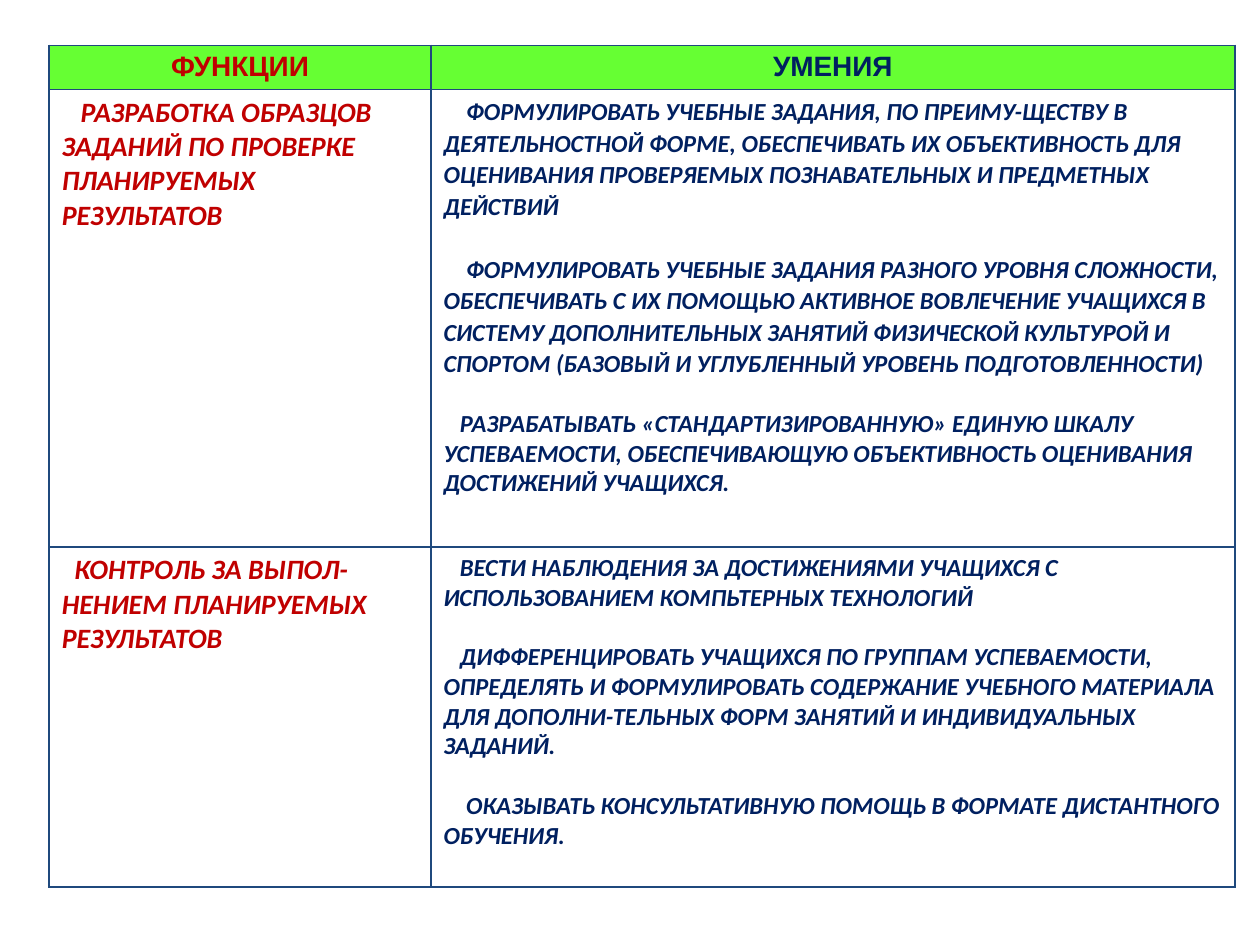
from lxml.etree import fromstring
from pptx import Presentation
from pptx.dml.color import RGBColor
from pptx.enum.text import PP_ALIGN
from pptx.util import Inches, Pt

RED = RGBColor(0xC0, 0x00, 0x00)
NAVY = RGBColor(0x00, 0x20, 0x60)
GREEN = RGBColor(0x66, 0xFF, 0x33)
EDGE = RGBColor(0x1F, 0x49, 0x7D)
INKS = (RED, NAVY)

HEADS = ("ФУНКЦИИ", "УМЕНИЯ")
# Each paragraph: text, first-line indent in inches, line pitch in points
ROWS = [
    (
        [("РАЗРАБОТКА ОБРАЗЦОВ ЗАДАНИЙ ПО ПРОВЕРКЕ ПЛАНИРУЕМЫХ РЕЗУЛЬТАТОВ", 0.15, None)],
        [
            ("ФОРМУЛИРОВАТЬ УЧЕБНЫЕ ЗАДАНИЯ, ПО ПРЕИМУ-ЩЕСТВУ В ДЕЯТЕЛЬНОСТНОЙ ФОРМЕ, "
             "ОБЕСПЕЧИВАТЬ ИХ ОБЪЕКТИВНОСТЬ ДЛЯ ОЦЕНИВАНИЯ ПРОВЕРЯЕМЫХ ПОЗНАВАТЕЛЬНЫХ "
             "И ПРЕДМЕТНЫХ ДЕЙСТВИЙ", 0.18, 18),
            ("ФОРМУЛИРОВАТЬ УЧЕБНЫЕ ЗАДАНИЯ РАЗНОГО УРОВНЯ СЛОЖНОСТИ, ОБЕСПЕЧИВАТЬ "
             "С ИХ ПОМОЩЬЮ АКТИВНОЕ ВОВЛЕЧЕНИЕ УЧАЩИХСЯ В СИСТЕМУ ДОПОЛНИТЕЛЬНЫХ "
             "ЗАНЯТИЙ ФИЗИЧЕСКОЙ КУЛЬТУРОЙ И СПОРТОМ (БАЗОВЫЙ И УГЛУБЛЕННЫЙ УРОВЕНЬ "
             "ПОДГОТОВЛЕННОСТИ)", 0.18, 18),
            ("РАЗРАБАТЫВАТЬ «СТАНДАРТИЗИРОВАННУЮ» ЕДИНУЮ ШКАЛУ УСПЕВАЕМОСТИ, "
             "ОБЕСПЕЧИВАЮЩУЮ ОБЪЕКТИВНОСТЬ ОЦЕНИВАНИЯ ДОСТИЖЕНИЙ УЧАЩИХСЯ.", 0.13, 17),
        ],
    ),
    (
        [("КОНТРОЛЬ ЗА ВЫПОЛ-НЕНИЕМ ПЛАНИРУЕМЫХ РЕЗУЛЬТАТОВ", 0.1, None)],
        [
            ("ВЕСТИ НАБЛЮДЕНИЯ ЗА ДОСТИЖЕНИЯМИ УЧАЩИХСЯ С ИСПОЛЬЗОВАНИЕМ "
             "КОМПЬТЕРНЫХ ТЕХНОЛОГИЙ", 0.13, 17),
            ("ДИФФЕРЕНЦИРОВАТЬ УЧАЩИХСЯ ПО ГРУППАМ УСПЕВАЕМОСТИ, ОПРЕДЕЛЯТЬ И "
             "ФОРМУЛИРОВАТЬ СОДЕРЖАНИЕ УЧЕБНОГО МАТЕРИАЛА ДЛЯ ДОПОЛНИ-ТЕЛЬНЫХ ФОРМ "
             "ЗАНЯТИЙ И ИНДИВИДУАЛЬНЫХ ЗАДАНИЙ.", 0.13, 17),
            ("ОКАЗЫВАТЬ КОНСУЛЬТАТИВНУЮ ПОМОЩЬ В ФОРМАТЕ ДИСТАНТНОГО ОБУЧЕНИЯ.", 0.18, 17),
        ],
    ),
]
WIDE = (3.03, 6.38)
HIGH = (0.35, 3.63, 2.7)
NS = "http://schemas.openxmlformats.org/drawingml/2006/main"


def frame(cell):
    """Draw a thin line on all four sides of a cell."""
    props = cell._tc.get_or_add_tcPr()
    for at, side in enumerate("LRTB"):
        props.insert(at, fromstring(
            f'<a:ln{side} xmlns:a="{NS}" w="{Pt(1)}"><a:solidFill>'
            f'<a:srgbClr val="{EDGE}"/></a:solidFill></a:ln{side}>'))


def style(para, size, name, ink, slant):
    font = para.runs[0].font
    font.size, font.name = Pt(size), name
    font.bold, font.italic = True, slant
    font.color.rgb = ink


def write(cell, items, size, ink):
    """Fill a body cell, with one blank line's height between paragraphs."""
    box = cell.text_frame
    box.text = "\n".join(text for text, _, _ in items)
    for at, (para, (_, dent, pitch)) in enumerate(zip(box.paragraphs, items)):
        props = para._p.get_or_add_pPr()
        props.set("marL", "0")
        props.set("indent", str(Inches(dent)))
        if pitch:
            para.line_spacing = Pt(pitch)
            para.space_before = Pt(pitch if at else 0)
        style(para, size, "Calibri", ink, True)


deck = Presentation()
deck.slide_width, deck.slide_height = Inches(10), Inches(7.5)
slide = deck.slides.add_slide(deck.slide_layouts[6])

# Table grid
grid = slide.shapes.add_table(
    len(HIGH), len(WIDE), Inches(0.39), Inches(0.36),
    Inches(sum(WIDE)), Inches(sum(HIGH))).table
grid.first_row = grid.horz_banding = False
for col, wide in zip(grid.columns, WIDE):
    col.width = Inches(wide)
for row, high in zip(grid.rows, HIGH):
    row.height = Inches(high)

# Header row
for col, (head, ink) in enumerate(zip(HEADS, INKS)):
    cell = grid.cell(0, col)
    cell.text_frame.text = head
    para = cell.text_frame.paragraphs[0]
    para.alignment = PP_ALIGN.CENTER
    style(para, 16, "Arial", ink, False)
    cell.fill.solid()
    cell.fill.fore_color.rgb = GREEN

# Body rows
for row, parts in enumerate(ROWS, 1):
    for col, (items, size, ink) in enumerate(zip(parts, (16, 14), INKS)):
        cell = grid.cell(row, col)
        write(cell, items, size, ink)
        cell.fill.background()

# Borders
for cell in grid.iter_cells():
    frame(cell)

deck.save("out.pptx")
